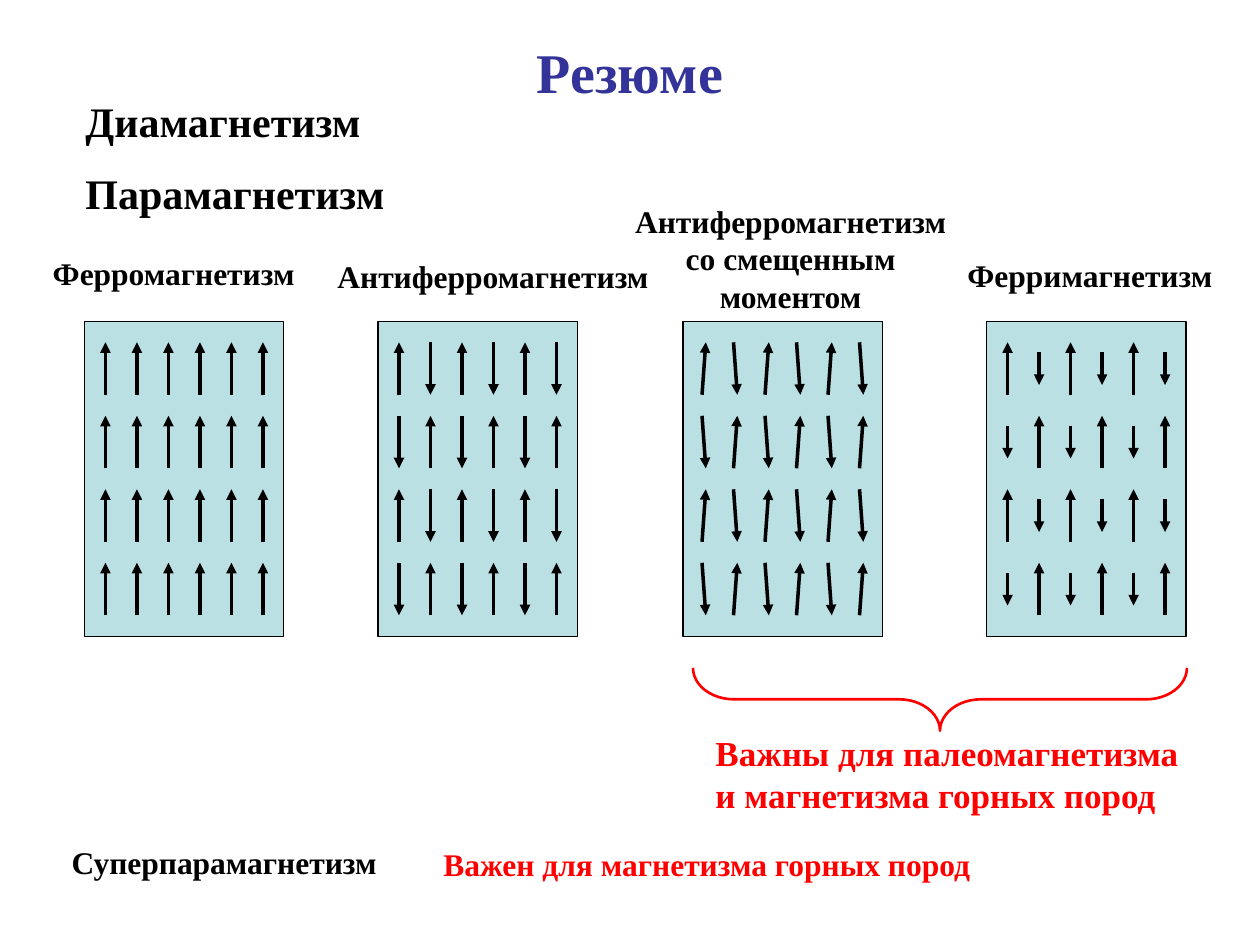
from lxml import etree
from pptx import Presentation
from pptx.dml.color import RGBColor
from pptx.enum.shapes import MSO_CONNECTOR, MSO_SHAPE
from pptx.enum.text import MSO_ANCHOR, MSO_AUTO_SIZE, PP_ALIGN
from pptx.oxml.ns import qn
from pptx.util import Inches, Pt

STRAIGHT = MSO_CONNECTOR.STRAIGHT
RECT, BRACE = MSO_SHAPE.RECTANGLE, MSO_SHAPE.LEFT_BRACE
TOP, NO_FIT = MSO_ANCHOR.TOP, MSO_AUTO_SIZE.NONE
LEFT, CENTER = PP_ALIGN.LEFT, PP_ALIGN.CENTER

FONT = "Times New Roman"
COLORS = {"title": "333399", "text": "000000", "accent": "FF0000", "panel": "BBE0E3"}
ROWS, COLS, COL_STEP = 4, 6, 0.25
PANEL_TOP, PANEL_H = 2.55, 2.5
GAP = PANEL_H / 15
PANEL_W = 2 * GAP + (COLS - 1) * COL_STEP
ARROW_H = (PANEL_H - (ROWS + 1) * GAP) / ROWS
SHORT_H = 0.26
LEAN = 0.03


def rgb(name):
    return RGBColor.from_string(COLORS[name])


def write(sp, text, size=18, color="text", align=LEFT):
    tf = sp.text_frame
    tf.word_wrap = True
    tf.auto_size = NO_FIT
    tf.vertical_anchor = TOP
    for i, line in enumerate(text.split("\n")):
        p = tf.add_paragraph() if i else tf.paragraphs[0]
        p.alignment = align
        r = p.add_run()
        r.text = line
        r.font.name = FONT
        r.font.size = Pt(size)
        r.font.bold = True
        r.font.color.rgb = rgb(color)


def add_title(s, box, text):
    sp = s.shapes.title
    sp.left, sp.top, sp.width, sp.height = map(Inches, box)
    write(sp, text, size=32, color="title", align=CENTER)


def add_text(s, box, text, **fmt):
    write(s.shapes.add_textbox(*map(Inches, box)), text, **fmt)


def add_arrow(shapes, x1, y1, x2, y2):
    sp = shapes.add_connector(STRAIGHT, *map(Inches, (x1, y1, x2, y2)))
    sp.line.color.rgb = rgb("text")
    sp.line.width = Pt(2)
    etree.SubElement(sp.line._get_or_add_ln(), qn("a:tailEnd"), type="triangle")
    etree.SubElement(sp._element.spPr, qn("a:effectLst"))


def add_panel(s, box, alternating=True, lean=0, down_h=ARROW_H):
    left, top, width, height = box
    shapes = s.shapes.add_group_shape().shapes
    sp = shapes.add_shape(RECT, *map(Inches, box))
    sp.shadow.inherit = False
    sp.fill.solid()
    sp.fill.fore_color.rgb = rgb("panel")
    sp.line.color.rgb = rgb("text")
    sp.line.width = Pt(0.75)
    for row in range(ROWS):
        middle = top + GAP + ARROW_H / 2 + row * (ARROW_H + GAP)
        for col in range(COLS):
            x = left + GAP + col * COL_STEP
            down = alternating and (row + col) % 2 == 1
            half = down_h / 2 if down else -ARROW_H / 2
            add_arrow(shapes, x - lean / 2, middle - half, x + lean / 2, middle + half)


def add_brace(s, box):
    left, top, width, height = box
    sp = s.shapes.add_shape(BRACE, Inches(left + (width - height) / 2),
                            Inches(top + (height - width) / 2),
                            Inches(height), Inches(width))
    sp.rotation = 270
    sp.adjustments[0] = 0.65
    sp.adjustments[1] = 0.5
    sp.shadow.inherit = False
    sp.fill.background()
    sp.line.color.rgb = rgb("accent")
    sp.line.width = Pt(1.5)


def main():
    prs = Presentation()
    prs.slide_width, prs.slide_height = Inches(10), Inches(7.5)
    s = prs.slides.add_slide(prs.slide_layouts[5])

    add_title(s, (0, 0.25, 10, 0.63), "Резюме")
    add_text(s, (0.58, 0.71, 3.08, 0.51), "Диамагнетизм", size=24)
    add_text(s, (0.58, 1.28, 2.83, 0.51), "Парамагнетизм", size=24)

    panels = [
        (0.67, {"alternating": False}, (0.32, 1.97, 2.25, 0.4), "Ферромагнетизм", LEFT),
        (3, {}, (2.58, 1.99, 2.83, 0.4), "Антиферромагнетизм", LEFT),
        (5.42, {"lean": LEAN}, (4.92, 1.55, 2.71, 1.01),
         "Антиферромагнетизм\nсо смещенным моментом", CENTER),
        (7.83, {"down_h": SHORT_H}, (7.58, 1.98, 2.22, 0.4), "Ферримагнетизм", LEFT),
    ]
    for left, pattern, caption_box, caption, align in panels:
        add_panel(s, (left, PANEL_TOP, PANEL_W, PANEL_H), **pattern)
        add_text(s, caption_box, caption, align=align)

    add_brace(s, (5.5, 5.3, 3.92, 0.5))
    add_text(s, (5.58, 5.76, 4.08, 0.77),
             "Важны для палеомагнетизма и магнетизма горных пород", size=20, color="accent")
    add_text(s, (0.47, 6.64, 3.03, 0.4), "Суперпарамагнетизм")
    add_text(s, (3.42, 6.66, 5, 0.4), "Важен для магнетизма горных пород", color="accent")
    prs.save("out.pptx")


if __name__ == "__main__":
    main()
